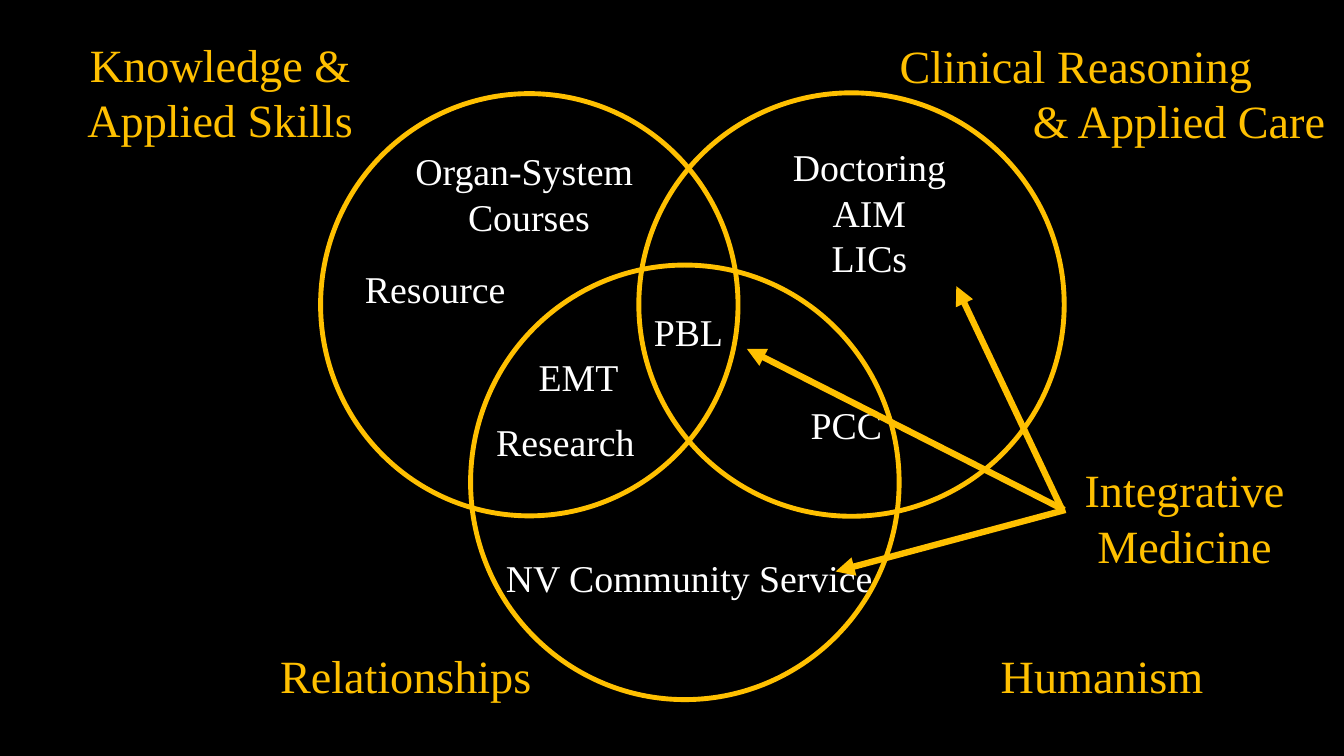
from pptx import Presentation
from pptx.dml.color import RGBColor
from pptx.enum.shapes import MSO_CONNECTOR as Connector, MSO_SHAPE as Shape
from pptx.enum.text import MSO_ANCHOR as Anchor, PP_ALIGN as Align
from pptx.oxml.ns import qn
from pptx.util import Cm, Pt
from lxml.etree import SubElement

COLORS = {"background": "000000", "gold": "FFC000", "text": "FFFFFF"}
FONT = "Times New Roman"
LINE_HEIGHT = 1.2
LEFT, CENTER, RIGHT = Align.LEFT, Align.CENTER, Align.RIGHT

# Courses inside the circles: left, top, width in cm, lines high, paragraphs
COURSES = [
    (6.07, 6.58, 9.8, 1, [("Resource", CENTER)]),
    (8.43, 3.61, 9.8, 2, [("Organ-System ", CENTER), ("Courses", CENTER)]),
    (12.09, 10.01, 10.39, 1, [("PCC", RIGHT)]),
    (10.01, 8.79, 9.14, 1, [("EMT", CENTER)]),
    (9.35, 10.44, 9.8, 1, [("Research", CENTER)]),
    (12.45, 7.67, 9.8, 1, [("PBL", CENTER)]),
    (12.27, 13.87, 10.2, 2, [("NV Community Service", CENTER)]),
    (17.01, 3.51, 9.8, 3, [("Doctoring", CENTER), ("AIM", CENTER), ("LICs", CENTER)]),
]
# Themes around the circles, same layout
THEMES = [
    (0.1, 16.18, 33.76, 1, [("\tRelationships\tHumanism", LEFT)]),
    (22.42, 0.81, 11.23, 2, [("Clinical Reasoning", LEFT), ("& Applied Care", RIGHT)]),
    (0.33, 0.79, 10.44, 2, [("Knowledge & Applied Skills", CENTER)]),
    (26.06, 11.51, 7.59, 2, [("Integrative Medicine", CENTER)]),
]
TAB_STOPS = (6.71, 24.87)
# Left, top, width, height in cm
CIRCLES = [
    (8.08, 2.36, 10.52, 10.64),
    (16.1, 2.34, 10.72, 10.67),
    (11.86, 6.68, 10.8, 10.95),
]
# From x, y to x, y in cm
ARROWS = [
    (26.85, 12.85, 21.06, 14.4),
    (26.82, 12.85, 18.82, 8.79),
    (26.77, 12.85, 24.1, 7.21),
]


def color(name):
    return RGBColor.from_string(COLORS[name])


def add_tab_stops(paragraph):
    tab_list = SubElement(paragraph._p.get_or_add_pPr(), qn("a:tabLst"))
    for position in TAB_STOPS:
        SubElement(tab_list, qn("a:tab"), pos=str(int(Cm(position))), algn="l")


def add_label(slide, label, size, color_name):
    left, top, width, lines, paragraphs = label
    height = Pt(LINE_HEIGHT * size * lines) + Cm(0.25)
    box = slide.shapes.add_shape(Shape.RECTANGLE, Cm(left), Cm(top), Cm(width), height)
    box.shadow.inherit = False
    box.fill.solid()
    box.fill.fore_color.rgb = color("background")
    box.line.fill.background()
    frame = box.text_frame
    frame.word_wrap = True
    frame.vertical_anchor = Anchor.TOP
    frame.margin_top = frame.margin_bottom = Cm(0.12)
    for index, (text, alignment) in enumerate(paragraphs):
        paragraph = frame.add_paragraph() if index else frame.paragraphs[0]
        paragraph.alignment = alignment
        paragraph.line_spacing = Pt(LINE_HEIGHT * size)
        if "\t" in text:
            add_tab_stops(paragraph)
        run = paragraph.add_run()
        run.text = text
        run.font.name = FONT
        run.font.size = Pt(size)
        run.font.color.rgb = color(color_name)


def add_circle(slide, bounds):
    circle = slide.shapes.add_shape(Shape.OVAL, *map(Cm, bounds))
    circle.shadow.inherit = False
    circle.fill.background()
    circle.line.color.rgb = color("gold")
    circle.line.width = Pt(3.5)


def add_arrow(slide, ends):
    arrow = slide.shapes.add_connector(Connector.STRAIGHT, *map(Cm, ends))
    arrow.line.color.rgb = color("gold")
    arrow.line.width = Pt(4.5)
    SubElement(arrow.line._get_or_add_ln(), qn("a:tailEnd"), type="triangle")
    SubElement(arrow._element.spPr, qn("a:effectLst"))


def main():
    presentation = Presentation()
    presentation.slide_width, presentation.slide_height = Cm(33.87), Cm(19.05)
    slide = presentation.slides.add_slide(presentation.slide_layouts[6])
    slide.background.fill.solid()
    slide.background.fill.fore_color.rgb = color("background")

    # Labels
    for course in COURSES:
        add_label(slide, course, 27, "text")
    for theme in THEMES:
        add_label(slide, theme, 33, "gold")

    # Overlapping circles and the arrows into them
    for bounds in CIRCLES:
        add_circle(slide, bounds)
    for ends in ARROWS:
        add_arrow(slide, ends)

    presentation.save("out.pptx")


if __name__ == "__main__":
    main()
